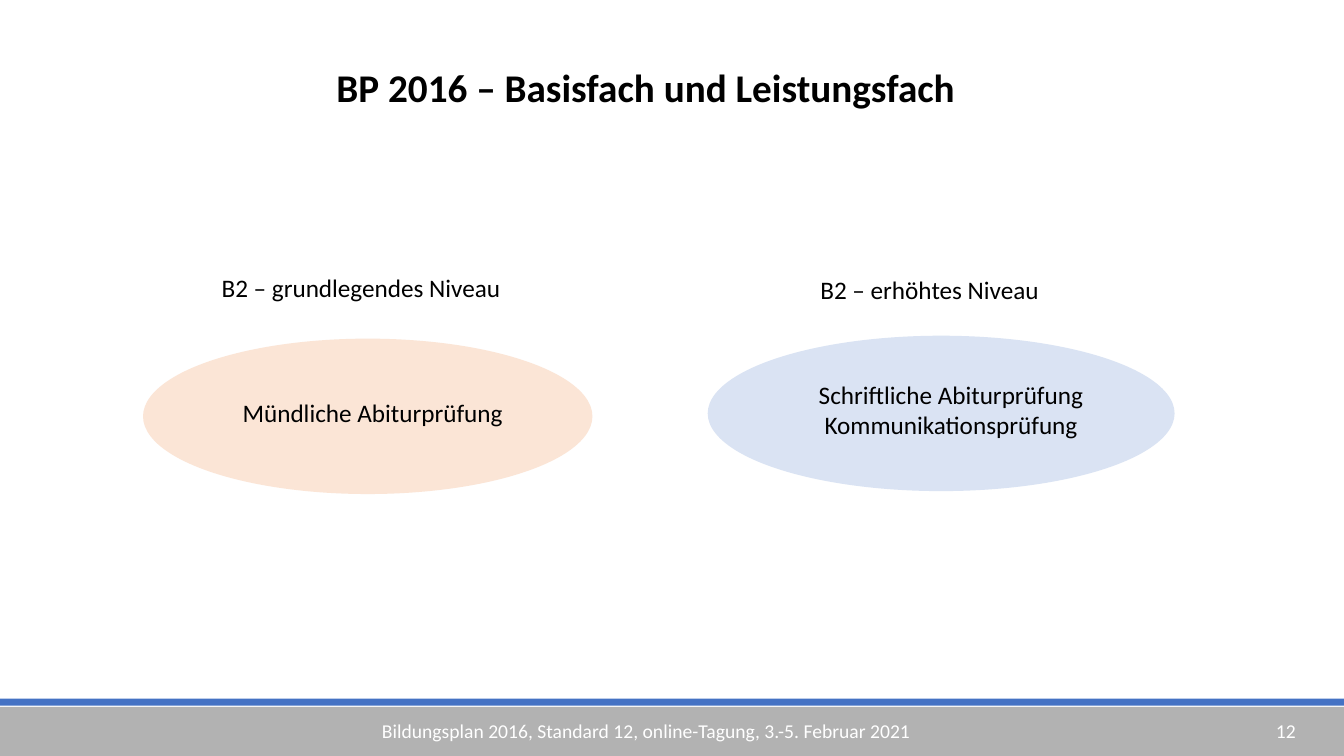
from pptx import Presentation
from pptx.dml.color import RGBColor
from pptx.enum.shapes import MSO_SHAPE
from pptx.enum.text import PP_ALIGN
from pptx.util import Pt

RECT, OVAL = MSO_SHAPE.RECTANGLE, MSO_SHAPE.OVAL
LEFT, CENTER = PP_ALIGN.LEFT, PP_ALIGN.CENTER
BLACK = RGBColor(0x00, 0x00, 0x00)
WHITE = RGBColor(0xFF, 0xFF, 0xFF)
GRAY = RGBColor(0xB2, 0xB2, 0xB2)
BLUE = RGBColor(0x44, 0x72, 0xC4)
PEACH = RGBColor(0xFB, 0xE5, 0xD6)
PALE = RGBColor(0xDA, 0xE3, 0xF3)
FONT = "Calibri"
WIDTH, HEIGHT = 960, 540


def add_form(slide, kind, box, color):
    """Add a plain filled shape in the box."""
    form = slide.shapes.add_shape(kind, *map(Pt, box))
    form.shadow.inherit = False
    form.fill.solid()
    form.fill.fore_color.rgb = color
    form.line.fill.background()


def add_text(slide, box, lines, size=18, color=BLACK, bold=False, align=LEFT):
    """Add a text box with one paragraph per line."""
    frame = slide.shapes.add_textbox(*map(Pt, box)).text_frame
    frame.word_wrap = True
    for i, line in enumerate(lines):
        para = frame.add_paragraph() if i else frame.paragraphs[0]
        para.alignment = align
        run = para.add_run()
        run.text = line
        run.font.name = FONT
        run.font.size = Pt(size)
        run.font.bold = bold
        run.font.color.rgb = color


def add_footer(slide, box, note, page):
    """Add the gray band, its blue rule, the note and the page number."""
    x, y, w, h = box
    rule = 5
    add_form(slide, RECT, (x, y + 6, w, h - 6), GRAY)
    add_form(slide, RECT, (x, y, w, rule), BLUE)
    add_text(slide, (x + 265.7, y + 11, 397, 24), [note], 14, WHITE)
    add_text(slide, (x + w - 55.7, y + 11, 55, 24), [page], 14, WHITE)


def add_course(slide, box, color, level, exams, label, inner, align):
    """Add an exam ellipse with its level label, both offset from the box."""
    x, y, w, h = box
    add_form(slide, OVAL, box, color)
    for (dx, dy, wide), lines, side in ((label, [level], LEFT),
                                        (inner, exams, align)):
        add_text(slide, (x + dx, y + dy, wide, 29 * len(lines)), lines,
                 align=side)


def main():
    """Build the slide and save it."""
    deck = Presentation()
    deck.slide_width, deck.slide_height = Pt(WIDTH), Pt(HEIGHT)
    slide = deck.slides.add_slide(deck.slide_layouts[6])
    add_footer(slide, (0, 499, WIDTH, HEIGHT - 499),
               "Bildungsplan 2016, Standard 12, online-Tagung, "
               "3.-5. Februar 2021", "12")
    add_text(slide, (233.3, 41.8, 460, 40),
             ["BP 2016 – Basisfach und Leistungsfach"], 28, bold=True)
    add_course(slide, (102.2, 241.9, 321, 111), PEACH,
               "B2 – grundlegendes Niveau", ["Mündliche Abiturprüfung"],
               (49, -51, 223), (64, 38.2, 208), LEFT)
    add_course(slide, (505.5, 239.8, 333.5, 111), PALE,
               "B2 – erhöhtes Niveau",
               ["Schriftliche Abiturprüfung", "Kommunikationsprüfung"],
               (73.4, -47.5, 176.5), (59.8, 27.4, 228), CENTER)
    deck.save("out.pptx")


if __name__ == "__main__":
    main()
